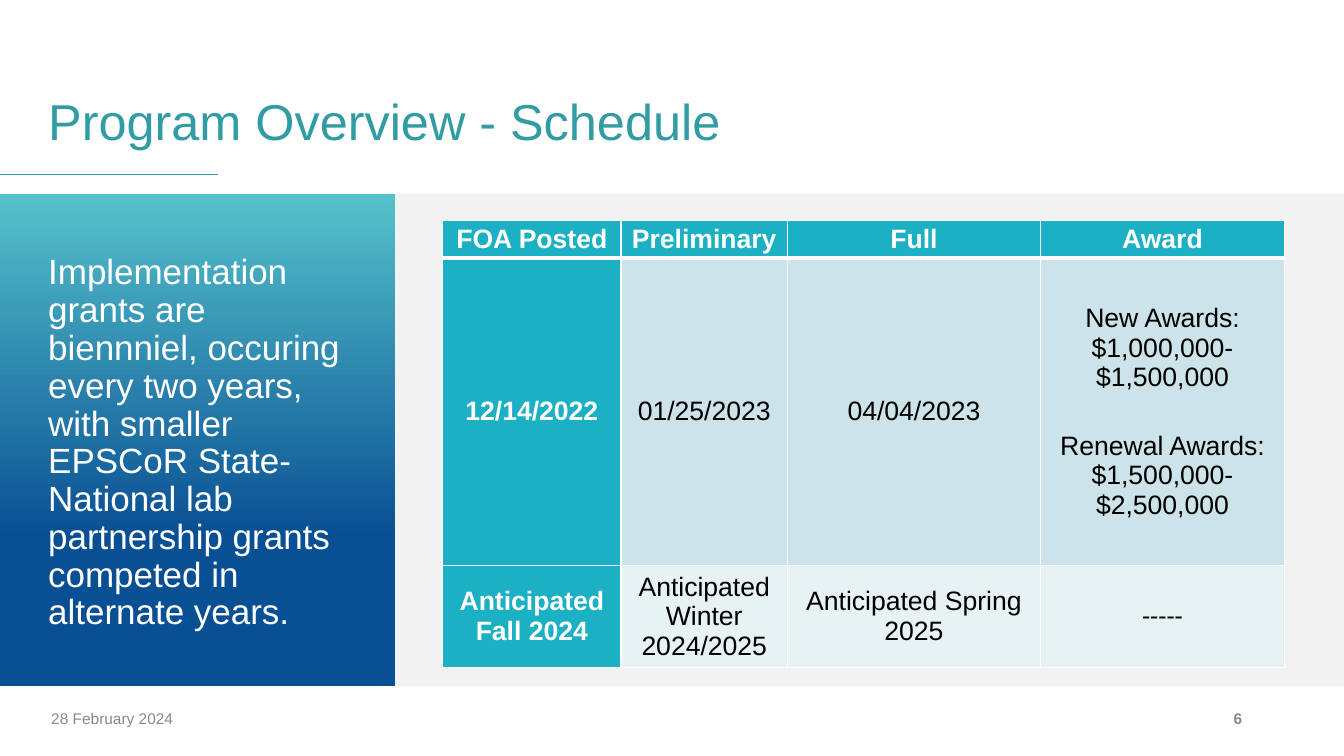
from lxml import etree
from pptx import Presentation
from pptx.dml.color import RGBColor
from pptx.enum.shapes import MSO_CONNECTOR as Connector, MSO_SHAPE as Shape
from pptx.enum.text import MSO_ANCHOR as Anchor, PP_ALIGN as Align
from pptx.oxml.ns import qn
from pptx.util import Inches, Pt

WHITE = RGBColor(0xFF, 0xFF, 0xFF)
BLACK = RGBColor(0x00, 0x00, 0x00)
GRAY = RGBColor(0x88, 0x88, 0x88)
PANEL_GRAY = RGBColor(0xF2, 0xF2, 0xF2)
TEAL = RGBColor(0x32, 0x9C, 0xA5)
LIGHT_TEAL = RGBColor(0x55, 0xC2, 0xCB)
NAVY = RGBColor(0x09, 0x4F, 0x93)
HEADER = RGBColor(0x1B, 0xB0, 0xC3)
BANDS = [RGBColor(0xCB, 0xE3, 0xE9), RGBColor(0xE7, 0xF2, 0xF4)]

PANEL_TOP, PANEL_HEIGHT, SIDEBAR_WIDTH = 1.92, 4.89, 3.92
FOOTER_TOP, FOOTER_HEIGHT = 6.93, 0.4

COLUMN_WIDTHS = [1.77, 1.65, 2.51, 2.42]
ROW_HEIGHTS = [0.37, 3.05, 1.01]
# Each cell is a list of paragraphs
SCHEDULE = [
    [["FOA Posted"], ["Preliminary"], ["Full"], ["Award"]],
    [["12/14/2022"], ["01/25/2023"], ["04/04/2023"],
     ["New Awards: $1,000,000-$1,500,000", "Renewal Awards: $1,500,000-$2,500,000"]],
    [["Anticipated Fall 2024"], ["Anticipated Winter 2024/2025"],
     ["Anticipated Spring 2025"], ["-----"]],
]


class SlideBuilder:
    font_name = "Arial"

    def __init__(self, slide):
        self.slide = slide

    def add_text(self, paragraph, text, size, color, bold=False, font=None, **layout):
        run = paragraph.add_run()
        run.text = text
        style = {"name": font or self.font_name, "size": Pt(size), "bold": bold}
        for name, value in style.items():
            setattr(run.font, name, value)
        run.font.color.rgb = color
        for name, value in layout.items():
            setattr(paragraph, name, value)

    def panel(self, left, width, color, end_color=None):
        shape = self.slide.shapes.add_shape(
            Shape.RECTANGLE, Inches(left), Inches(PANEL_TOP), Inches(width), Inches(PANEL_HEIGHT))
        shape.shadow.inherit = False
        shape.line.fill.background()
        if end_color is None:
            shape.fill.solid()
            shape.fill.fore_color.rgb = color
            return
        shape.fill.gradient()
        shape.fill.gradient_angle = 270
        stops = [(0, color), (0.7, end_color)]
        for stop, (position, stop_color) in zip(shape.fill.gradient_stops, stops):
            stop.position = position
            stop.color.rgb = stop_color

    def rule(self, left, right, top, color):
        line = self.slide.shapes.add_connector(
            Connector.STRAIGHT, Inches(left), Inches(top), Inches(right), Inches(top))
        line.line.color.rgb = color
        line.line.width = Pt(1)
        etree.SubElement(line._element.spPr, qn("a:effectLst"))

    def text(self, left, top, width, height, text, size, color,
             anchor=Anchor.MIDDLE, margin_top=0.05, **style):
        box = self.slide.shapes.add_textbox(
            Inches(left), Inches(top), Inches(width), Inches(height))
        frame = box.text_frame
        settings = {"word_wrap": True, "vertical_anchor": anchor,
                    "margin_top": Inches(margin_top)}
        for name, value in settings.items():
            setattr(frame, name, value)
        self.add_text(frame.paragraphs[0], text, size, color, **style)

    def border(self, cell, widths):
        properties = cell._tc.get_or_add_tcPr()
        for side, width in zip("LRTB", widths):
            line = etree.SubElement(properties, qn(f"a:ln{side}"), w=str(Pt(width)))
            fill = etree.SubElement(line, qn("a:solidFill"))
            etree.SubElement(fill, qn("a:srgbClr"), val=str(WHITE))

    def cell(self, cell, texts, fill, color, bold, font, widths):
        self.border(cell, widths)
        cell.fill.solid()
        cell.fill.fore_color.rgb = fill
        settings = {"vertical_anchor": Anchor.MIDDLE,
                    "margin_left": Inches(0.08), "margin_right": Inches(0.08),
                    "margin_top": 0, "margin_bottom": 0}
        for name, value in settings.items():
            setattr(cell, name, value)
        frame = cell.text_frame
        for index, text in enumerate(texts):
            paragraph = frame.add_paragraph() if index else frame.paragraphs[0]
            self.add_text(paragraph, text, 19, color, bold, font,
                          alignment=Align.CENTER, space_before=Pt(28 if index else 0))

    def table(self, left, top, rows):
        table = self.slide.shapes.add_table(
            len(rows), len(COLUMN_WIDTHS), Inches(left), Inches(top),
            Inches(sum(COLUMN_WIDTHS)), Inches(sum(ROW_HEIGHTS))).table
        table.horz_banding = False
        for column, width in zip(table.columns, COLUMN_WIDTHS):
            column.width = Inches(width)
        for r, (row, height) in enumerate(zip(rows, ROW_HEIGHTS)):
            table.rows[r].height = Inches(height)
            # Thick line under the header row
            widths = (1, 1, 3 if r == 1 else 1, 3 if r == 0 else 1)
            for c, texts in enumerate(row):
                heading = r == 0 or c == 0
                fill = HEADER if heading else BANDS[r - 1]
                color = WHITE if heading else BLACK
                font = "Calibri" if texts == ["-----"] else None
                self.cell(table.cell(r, c), texts, fill, color, heading, font, widths)


def main():
    presentation = Presentation()
    presentation.slide_width = Inches(13.33)
    presentation.slide_height = Inches(7.5)
    builder = SlideBuilder(presentation.slides.add_slide(presentation.slide_layouts[6]))

    # Background panels and title rule
    builder.panel(SIDEBAR_WIDTH, 13.33 - SIDEBAR_WIDTH, PANEL_GRAY)
    builder.panel(0, SIDEBAR_WIDTH, LIGHT_TEAL, NAVY)
    builder.rule(0, 2.16, 1.73, TEAL)

    # Footer
    builder.text(0.41, FOOTER_TOP, 3.51, FOOTER_HEIGHT, "28 February 2024", 11, GRAY)
    builder.text(9.42, FOOTER_TOP, 3, FOOTER_HEIGHT, "6", 11, GRAY,
                 bold=True, alignment=Align.RIGHT)

    # Sidebar text and title
    builder.text(0.38, 2.19, 3.33, 4.47,
                 "Implementation grants are biennniel, occuring every two years, "
                 "with smaller EPSCoR State-National lab partnership grants "
                 "competed in alternate years.",
                 25, WHITE, margin_top=0, line_spacing=0.9)
    builder.text(0.38, 0.84, 12.67, 0.75, "Program Overview - Schedule", 36, TEAL,
                 anchor=Anchor.TOP)

    # Schedule table
    builder.table(4.39, 2.19, SCHEDULE)

    presentation.save("out.pptx")


if __name__ == "__main__":
    main()
